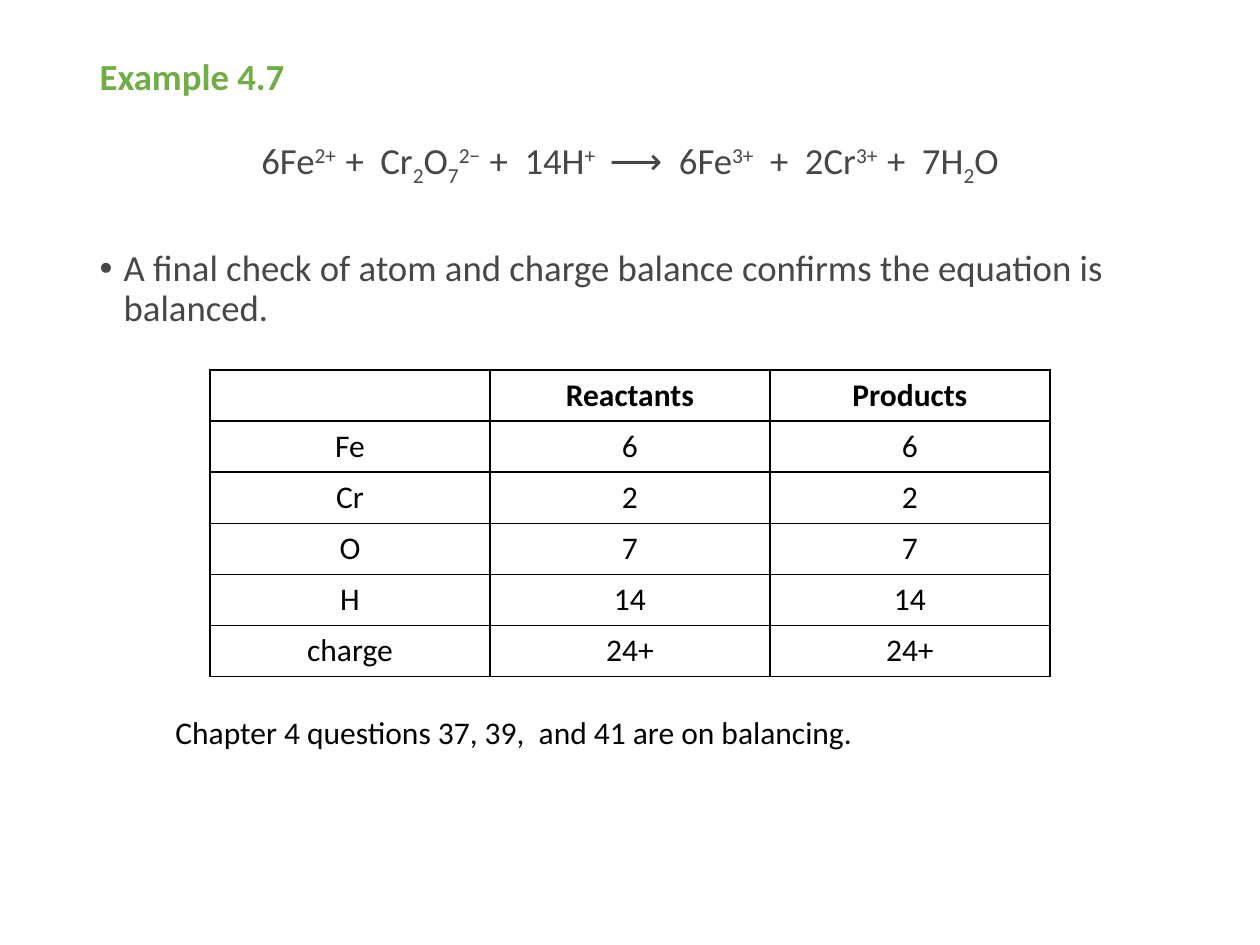
from lxml import etree
from pptx import Presentation
from pptx import util as u
from pptx.dml.color import RGBColor
from pptx.enum import text
from pptx.oxml import ns

PX = 914400 // 126
GREEN = RGBColor(0x70, 0xAD, 0x47)
GRAY = RGBColor(0x46, 0x48, 0x46)
BLACK = RGBColor(0, 0, 0)
SUB, SUP = -25000, 30000


def write(para, words, color, size, bold=False, baseline=0):
    span = para.add_run()
    span.text = words
    font = {"name": "Calibri", "size": u.Pt(size), "bold": bold}
    for key, value in font.items():
        setattr(span.font, key, value)
    span.font.color.rgb = color
    if baseline:
        span._r.get_or_add_rPr().set("baseline", str(baseline))


def place(box, left, top, width, height):
    area = {"left": left, "top": top, "width": width, "height": height}
    for key, value in area.items():
        setattr(box, key, value * PX)
    box.text_frame.word_wrap = True
    box.text_frame.auto_size = text.MSO_AUTO_SIZE.NONE


deck = Presentation()
deck.slide_width, deck.slide_height = 1260 * PX, 945 * PX
page = deck.slides.add_slide(deck.slide_layouts[1])

title = page.shapes.title
place(title, 87, 50, 1086, 58)
title.text_frame.vertical_anchor = text.MSO_ANCHOR.MIDDLE
heading = title.text_frame.paragraphs[0]
heading.alignment = text.PP_ALIGN.LEFT
heading.line_spacing = 0.9
write(heading, "Example 4.7", GREEN, 21, bold=True)

body = page.placeholders[1]
place(body, 87, 132, 1086, 523)
equation = body.text_frame.paragraphs[0]
check = body.text_frame.add_paragraph()
layout = [
    (equation, text.PP_ALIGN.CENTER, 0, 0, "buNone", {}),
    (check, text.PP_ALIGN.LEFT, 38, 24, "buChar", {"char": "•"}),
]
for para, align, before, indent, bullet, marks in layout:
    style = {"alignment": align, "line_spacing": 0.9, "space_before": u.Pt(before)}
    for key, value in style.items():
        setattr(para, key, value)
    props = para._p.get_or_add_pPr()
    props.set("marL", str(indent * PX))
    props.set("indent", str(-indent * PX))
    etree.SubElement(props, ns.qn(f"a:{bullet}"), marks)

formula = [
    ("6Fe", 0), ("2+  ", SUP), ("+  Cr", 0), ("2", SUB), ("O", 0), ("7", SUB),
    ("2−  ", SUP), ("+  14H", 0), ("+   ", SUP), ("⟶  6Fe", 0), ("3+", SUP),
    ("  +  2Cr", 0), ("3+  ", SUP), ("+  7H", 0), ("2", SUB), ("O", 0),
]
for words, baseline in formula:
    write(equation, words, GRAY, 21, baseline=baseline)
write(check, "A final check of atom and charge balance confirms the equation is balanced.", GRAY, 21)

balance = [
    ("", "Reactants", "Products"),
    ("Fe", "6", "6"),
    ("Cr", "2", "2"),
    ("O", "7", "7"),
    ("H", "14", "14"),
    ("charge", "24+", "24+"),
]
frame = page.shapes.add_table(6, 3, 210 * PX, 370 * PX, 840 * PX, 306 * PX)
table = frame.table
table.first_row = table.horz_banding = False
for row, values in enumerate(balance):
    for column, value in enumerate(values):
        cell = table.cell(row, column)
        props = cell._tc.get_or_add_tcPr()
        for side in ("lnL", "lnR", "lnT", "lnB"):
            line = etree.SubElement(props, ns.qn(f"a:{side}"), w=str(u.Pt(1)))
            fill = etree.SubElement(line, ns.qn("a:solidFill"))
            etree.SubElement(fill, ns.qn("a:srgbClr"), val=str(BLACK))
        cell.fill.background()
        para = cell.text_frame.paragraphs[0]
        para.alignment = text.PP_ALIGN.CENTER
        if value:
            write(para, value, BLACK, 18, bold=row == 0)

note = page.shapes.add_textbox(0, 0, 0, 0)
place(note, 163, 707, 939, 50)
write(note.text_frame.paragraphs[0], "Chapter 4 questions 37, 39,  and 41 are on balancing.", BLACK, 18)

deck.save("out.pptx")
